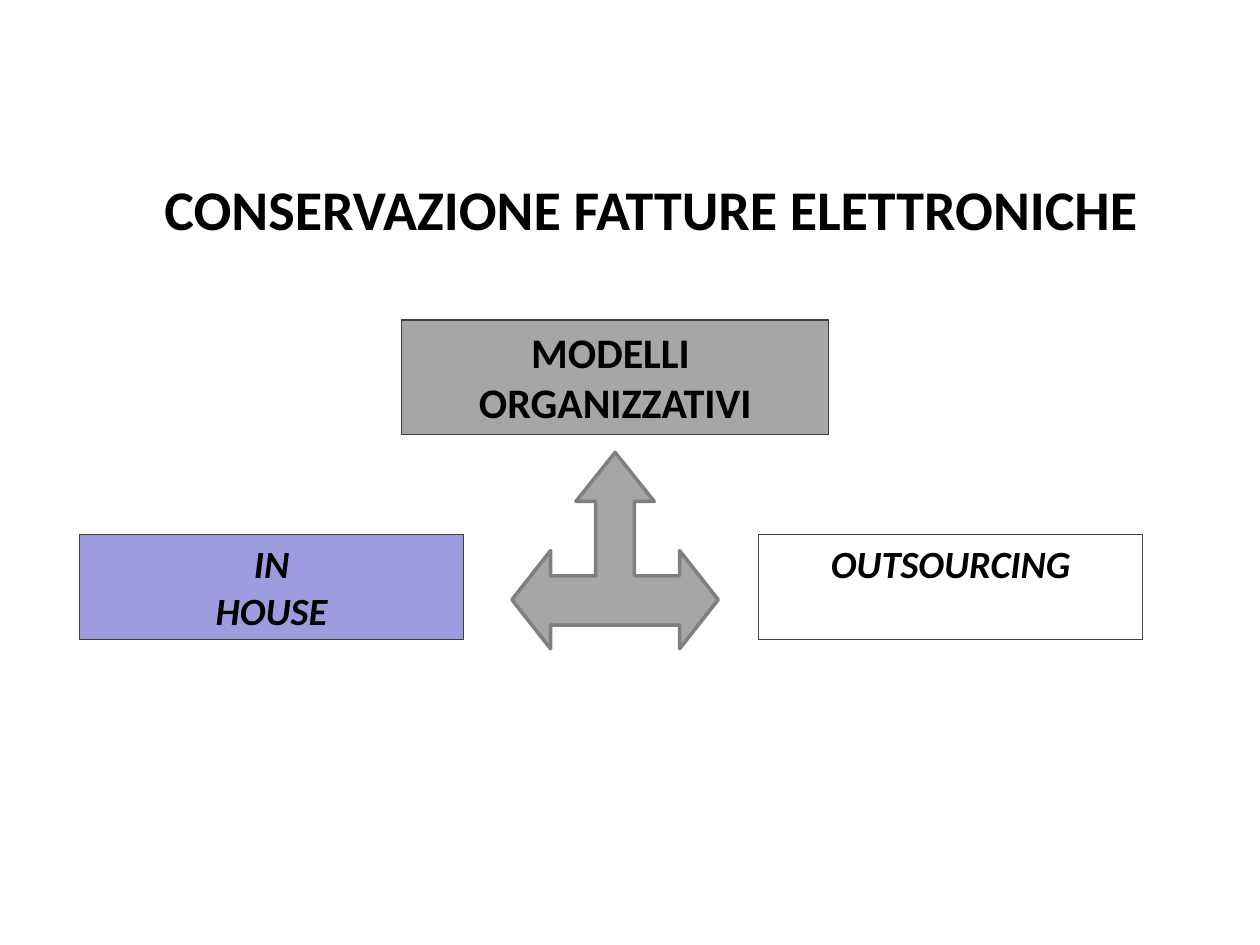
from dataclasses import dataclass

from pptx import Presentation
from pptx import util as u
from pptx.dml.color import RGBColor
from pptx.enum import shapes, text


@dataclass(frozen=True)
class Theme:
    font: str = "Calibri"
    ink: str = "000000"
    grey: str = "A6A6A6"
    lilac: str = "9C9CDF"
    white: str = "FFFFFF"
    border: str = "404040"
    arrow_border: str = "7F7F7F"
    title_size: int = 32
    heading_size: int = 24
    option_size: int = 22


class SlideBuilder:
    def __init__(self, deck, theme):
        self.theme = theme
        self.page = deck.slides.add_slide(deck.slide_layouts[6])

    def label(self, shape, lines, size, italic=False):
        frame = shape.text_frame
        frame.word_wrap = True
        frame.text = "\n".join(lines)
        for para in frame.paragraphs:
            para.alignment = text.PP_ALIGN.CENTER
            for span in para.runs:
                span.font.name = self.theme.font
                span.font.size = u.Pt(size)
                span.font.bold = True
                span.font.italic = italic
                span.font.color.rgb = RGBColor.from_string(self.theme.ink)
        return frame

    def paint(self, shape, fill, line, width):
        shape.shadow.inherit = False
        shape.fill.solid()
        shape.fill.fore_color.rgb = RGBColor.from_string(fill)
        shape.line.color.rgb = RGBColor.from_string(line)
        shape.line.width = u.Pt(width)

    def title(self, place, line):
        box = self.page.shapes.add_textbox(*map(u.Cm, place))
        frame = self.label(box, [line], self.theme.title_size)
        frame.vertical_anchor = text.MSO_ANCHOR.MIDDLE

    def panel(self, place, lines, fill, size, italic=False):
        box = self.page.shapes.add_shape(
            shapes.MSO_SHAPE.RECTANGLE, *map(u.Cm, place))
        self.paint(box, fill, self.theme.border, 0.75)
        frame = self.label(box, lines, size, italic)
        frame.vertical_anchor = text.MSO_ANCHOR.TOP
        frame.auto_size = text.MSO_AUTO_SIZE.SHAPE_TO_FIT_TEXT

    def three_way_arrow(self, center, right_half):
        left_half = [(-x, y) for x, y in reversed(right_half) if x]
        start, *rest = [(u.Cm(center + x), u.Cm(y))
                        for x, y in right_half + left_half]
        outline = self.page.shapes.build_freeform(*start)
        outline.add_line_segments(rest, close=True)
        arrow = outline.convert_to_shape()
        self.paint(arrow, self.theme.grey, self.theme.arrow_border, 2)


def main():
    deck = Presentation()
    deck.slide_width, deck.slide_height = u.Cm(25.4), u.Cm(19.05)
    theme = Theme()
    slide = SlideBuilder(deck, theme)

    slide.panel((8.1, 6.45, 8.61, 2.31), ["MODELLI ", "ORGANIZZATIVI"],
                theme.grey, theme.heading_size)
    slide.three_way_arrow(12.4, [
        (0, 9.12), (0.79, 10.11), (0.39, 10.11), (0.39, 11.61), (1.3, 11.61),
        (1.3, 11.1), (2.08, 12.09), (1.3, 13.08), (1.3, 12.6)])
    slide.title((0.43, 3.43, 25.4, 1.52), "CONSERVAZIONE FATTURE ELETTRONICHE")
    options = [(1.6, ["IN", "HOUSE"], theme.lilac),
               (15.29, ["OUTSOURCING"], theme.white)]
    for left, lines, fill in options:
        slide.panel((left, 10.77, 7.75, 2.13), lines, fill,
                    theme.option_size, italic=True)

    deck.save("out.pptx")


if __name__ == "__main__":
    main()
